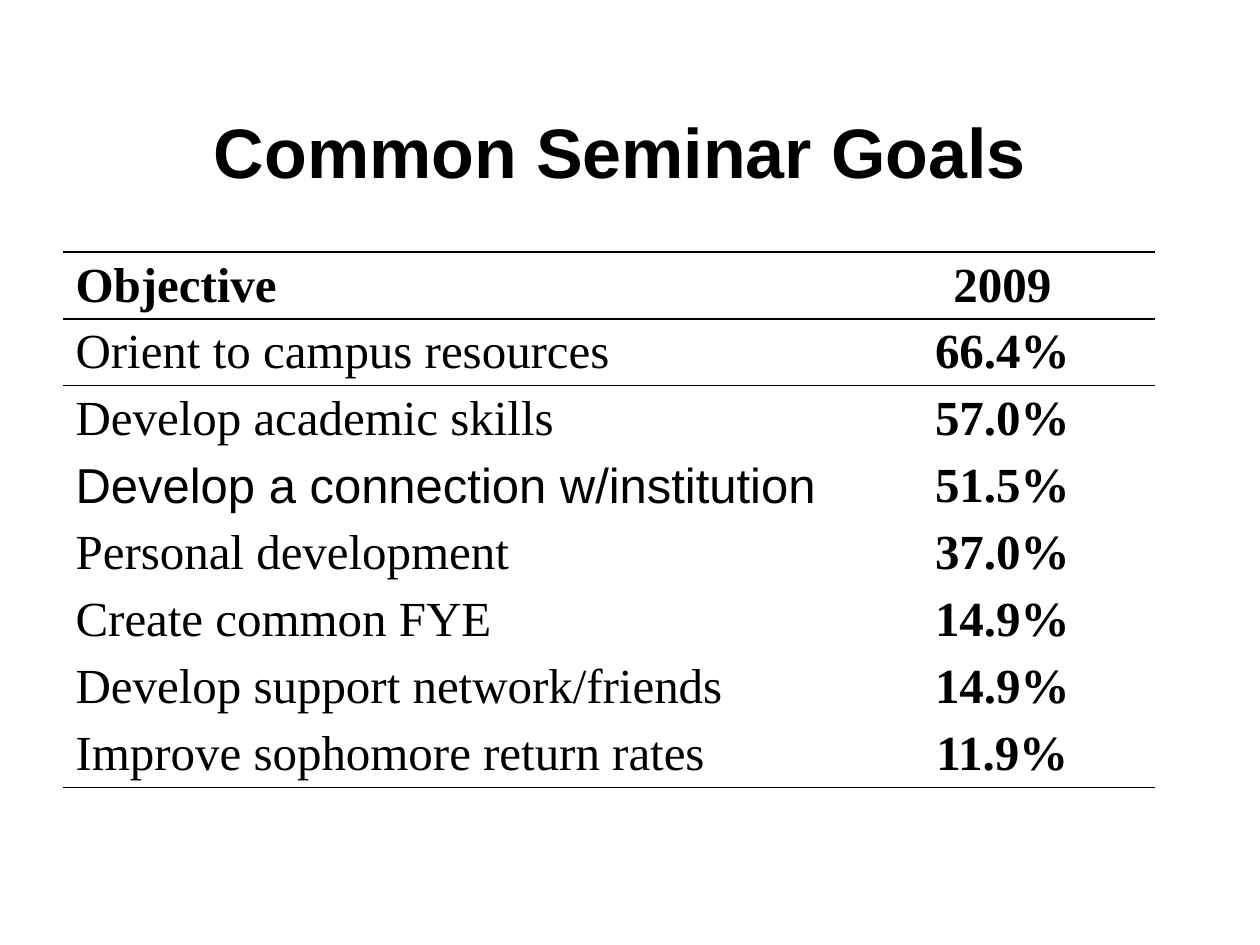
import pptx
import pptx.dml.color
import pptx.enum.text
import pptx.oxml
import pptx.oxml.ns
import pptx.util

Inches = pptx.util.Inches
Pt = pptx.util.Pt
ALIGN = pptx.enum.text.PP_ALIGN
COLORS = {"ink": "000000", "paper": "FFFFFF"}
NO_STYLE = "{2D5ABB26-0587-4C30-8999-92F81FD0307C}"


def write_text(frame, text, font="Times New Roman", size=28, bold=False, align=ALIGN.LEFT):
    para = frame.paragraphs[0]
    para.alignment = align
    span = para.add_run()
    span.text = text
    span.font.name = font
    span.font.size = Pt(size)
    span.font.bold = bold
    span.font.color.rgb = pptx.dml.color.RGBColor.from_string(COLORS["ink"])


def add_rules(cell, sides):
    properties = cell._tc.get_or_add_tcPr()
    for position, side in enumerate(sides):
        rule = pptx.oxml.parse_xml(
            f'<a:ln{side} {pptx.oxml.ns.nsdecls("a")} w="{Pt(1)}"><a:solidFill>'
            f'<a:srgbClr val="{COLORS["ink"]}"/></a:solidFill></a:ln{side}>'
        )
        properties.insert(position, rule)


deck = pptx.Presentation()
deck.slide_width = Inches(10)
deck.slide_height = Inches(7.5)
page = deck.slides.add_slide(deck.slide_layouts[5])
page.background.fill.solid()
page.background.fill.fore_color.rgb = pptx.dml.color.RGBColor.from_string(COLORS["paper"])

title = page.shapes.title
title.left, title.top = Inches(0.67), Inches(0.75)
title.width, title.height = Inches(8.5), Inches(1.25)
title.text_frame.auto_size = pptx.enum.text.MSO_AUTO_SIZE.NONE
title.text_frame.vertical_anchor = pptx.enum.text.MSO_ANCHOR.TOP
title.text_frame.margin_top = Inches(0.11)
write_text(title.text_frame, "Common Seminar Goals", font="Arial", size=40, bold=True, align=ALIGN.CENTER)

goals = [
    ("Objective", "2009"),
    ("Orient to campus resources", "66.4%"),
    ("Develop academic skills", "57.0%"),
    ("Develop a connection w/institution", "51.5%"),
    ("Personal development", "37.0%"),
    ("Create common FYE", "14.9%"),
    ("Develop support network/friends", "14.9%"),
    ("Improve sophomore return rates", "11.9%"),
]
row_height = Inches(0.41)
last = len(goals) - 1
rules = {0: "TB", 1: "T", last: "B"}
fonts = {"Develop a connection w/institution": "Arial"}

table = page.shapes.add_table(
    len(goals), 2, Inches(0.5), Inches(2), Inches(8.67), row_height * len(goals)
).table
table.first_row = False
table.horz_banding = False
table._tbl.tblPr.find(pptx.oxml.ns.qn("a:tableStyleId")).text = NO_STYLE
table.columns[0].width = Inches(6.24)
table.columns[1].width = Inches(2.43)

for row, (objective, share) in enumerate(goals):
    table.rows[row].height = row_height
    name_cell, share_cell = table.cell(row, 0), table.cell(row, 1)
    write_text(name_cell.text_frame, objective, font=fonts.get(objective, "Times New Roman"), bold=row == 0)
    write_text(share_cell.text_frame, share, bold=True, align=ALIGN.CENTER)
    for cell in (name_cell, share_cell):
        cell.fill.background()
        add_rules(cell, rules.get(row, ""))

deck.save("out.pptx")
